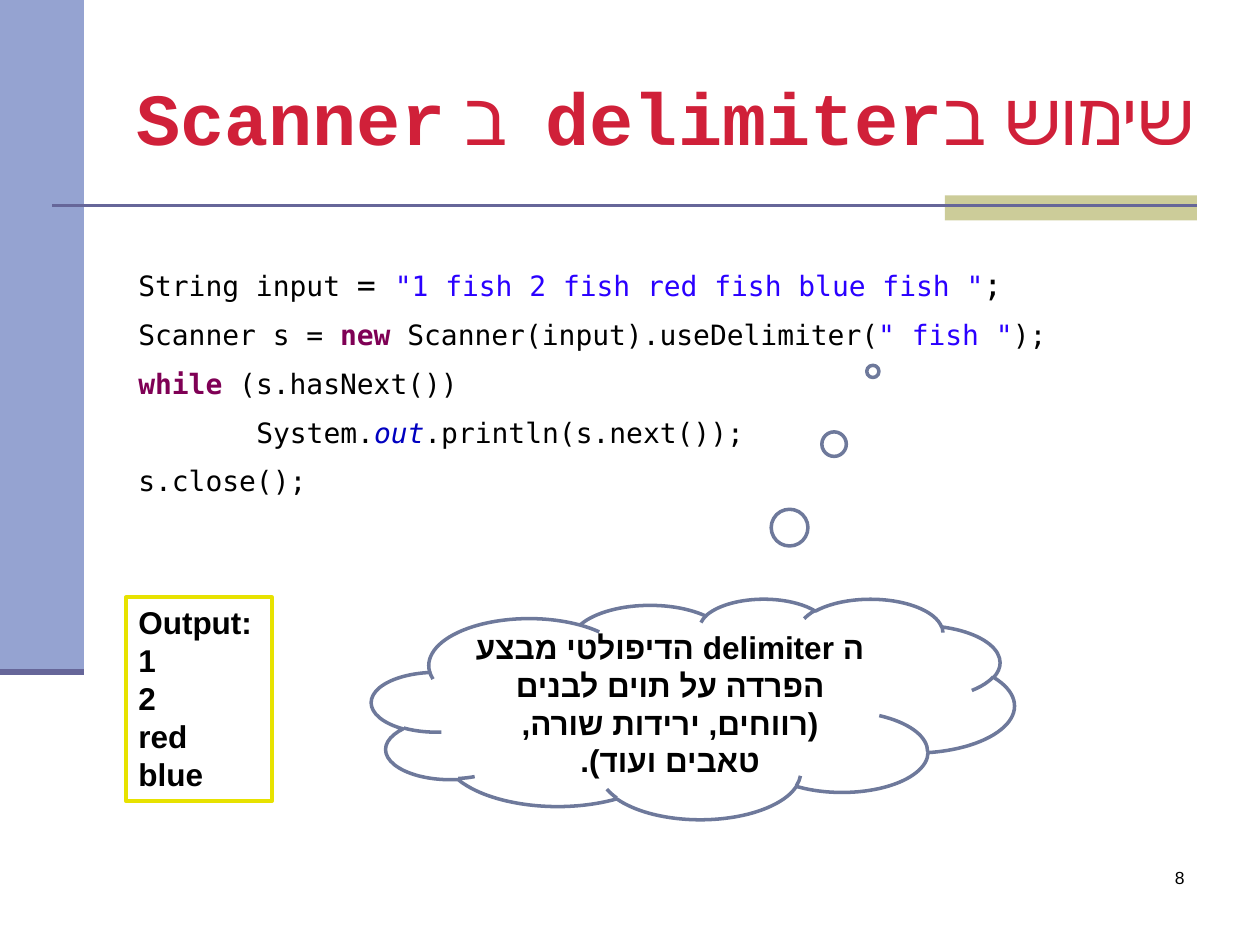
"""Build the slide on using a delimiter with Scanner."""
import pptx
import pptx.util
import pptx.dml.color
import pptx.enum.shapes
import pptx.enum.text
import pptx.oxml.xmlchemy

Pt = pptx.util.Pt
Kind = pptx.enum.shapes.MSO_SHAPE
Align = pptx.enum.text.PP_ALIGN
Anchor = pptx.enum.text.MSO_ANCHOR
Node = pptx.oxml.xmlchemy.OxmlElement


def paint(item, color):
    if hasattr(item, "solid"):
        item.solid()
        item = item.fore_color
    item.rgb = pptx.dml.color.RGBColor.from_string(color)


def write(para, text, size, face, color="000000", bold=False, slant=False):
    run = para.add_run()
    run.text = text
    font = run.font
    font.size, font.name, font.bold, font.italic = Pt(size), face, bold, slant
    paint(font.color, color)
    return run


deck = pptx.Presentation()
deck.slide_width, deck.slide_height = Pt(720), Pt(540)
slide = deck.slides.add_slide(deck.slide_layouts[6])
shapes = slide.shapes

for box, color in [((0, 0, 48, 384), "95A3D1"), ((540, 111.6, 144, 14.4), "CCCC99")]:
    bar = shapes.add_shape(Kind.RECTANGLE, *map(Pt, box))
    bar.shadow.inherit = False
    paint(bar.fill, color)
    bar.line.fill.background()

for ends, width in [((30, 117.6, 684, 117.6), 1.5), ((0, 384, 48, 384), 3.5)]:
    rule = shapes.add_connector(pptx.enum.shapes.MSO_CONNECTOR.STRAIGHT, *map(Pt, ends))
    paint(rule.line.fill, "666699")
    rule.line.width = Pt(width)
    rule._element.spPr.append(Node("a:effectLst"))

page = shapes.add_textbox(Pt(534), Pt(492), Pt(150), Pt(36)).text_frame
page.word_wrap = True
para = page.paragraphs[0]
para.alignment = Align.RIGHT
write(para, "8", 10, "Arial")

title = shapes.add_textbox(Pt(57), Pt(21.6), Pt(646.5), Pt(90)).text_frame
title.word_wrap = True
title.vertical_anchor = Anchor.MIDDLE
para = title.paragraphs[0]
para.alignment = Align.CENTER
para._p.get_or_add_pPr().set("rtl", "1")
for text, face in [
    ("שימוש ב", "Times New Roman"),
    ("delimiter ", "Courier New"),
    (" ב ", "Times New Roman"),
    ("Scanner", "Courier New"),
]:
    write(para, text, 42, face, "D02039", face == "Courier New")

plain, key, quote, field = (
    ("000000",), ("7F0055", True), ("2A00FF",), ("0000C0", False, True))
lines = [
    [("String input ", 16, plain), ("= ", 18, plain),
     ('"1 fish 2 fish red fish blue fish "', 16, quote), (";", 18, plain)],
    [("Scanner s =", 16, plain), (" new", 16, key),
     (" Scanner(input).useDelimiter(", 16, plain),
     ('" fish "', 16, quote), (");", 16, plain)],
    [("while", 16, key), (" (s.hasNext())", 16, plain)],
    [("System.", 16, plain), ("out", 16, field), (".println(s.next());", 16, plain)],
    [("s.close();", 16, plain)],
]
code = shapes.add_textbox(Pt(72), Pt(150.4), Pt(612), Pt(168)).text_frame
code.word_wrap = True
for row, line in enumerate(lines):
    para = code.add_paragraph() if row else code.paragraphs[0]
    para.line_spacing = 0.9
    para.space_before = Pt(10.5 if row else 0)
    if row == 3:
        para._p.get_or_add_pPr().set("marL", str(Pt(67.4)))
    for text, size, style in line:
        write(para, text, size, "DejaVu Sans Mono", *style)

panel = shapes.add_shape(Kind.RECTANGLE, Pt(72), Pt(341.3), Pt(83.5), Pt(116.6))
panel.shadow.inherit = False
panel.fill.background()
paint(panel.line.fill, "E7E200")
panel.line.width = Pt(2)
frame = panel.text_frame
frame.vertical_anchor = Anchor.TOP
for row, text in enumerate(["Output:", "1", "2", "red", "blue"]):
    para = frame.add_paragraph() if row else frame.paragraphs[0]
    para.alignment = Align.LEFT
    write(para, text, 18, "Arial", bold=True)

cloud = shapes.add_shape(Kind.CLOUD_CALLOUT, Pt(212.4), Pt(342), Pt(367.2), Pt(126))
cloud.shadow.inherit = False
cloud.adjustments[0], cloud.adjustments[1] = 0.28, -1.53
paint(cloud.fill, "FFFFFF")
paint(cloud.line.fill, "6E799B")
cloud.line.width = Pt(2)
frame = cloud.text_frame
frame.word_wrap = True
frame.vertical_anchor = Anchor.MIDDLE
para = frame.paragraphs[0]
para.alignment = Align.CENTER
para._p.get_or_add_pPr().set("rtl", "1")
note = "ה delimiter הדיפולטי מבצע הפרדה על תוים לבנים (רווחים, ירידות שורה, טאבים ועוד)."
run = write(para, note, 18, "Arial", bold=True)
script = Node("a:cs")
script.set("typeface", "Arial")
run._r.rPr.append(script)

deck.save("out.pptx")
